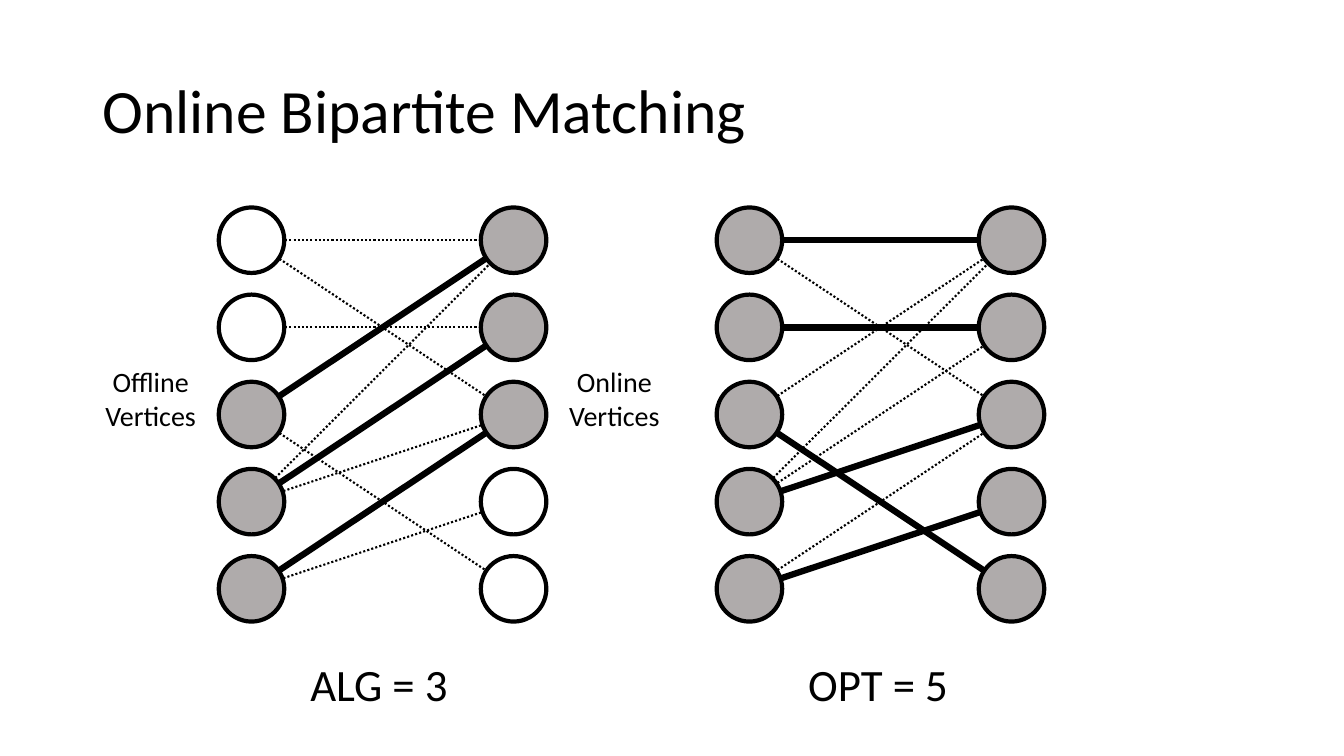
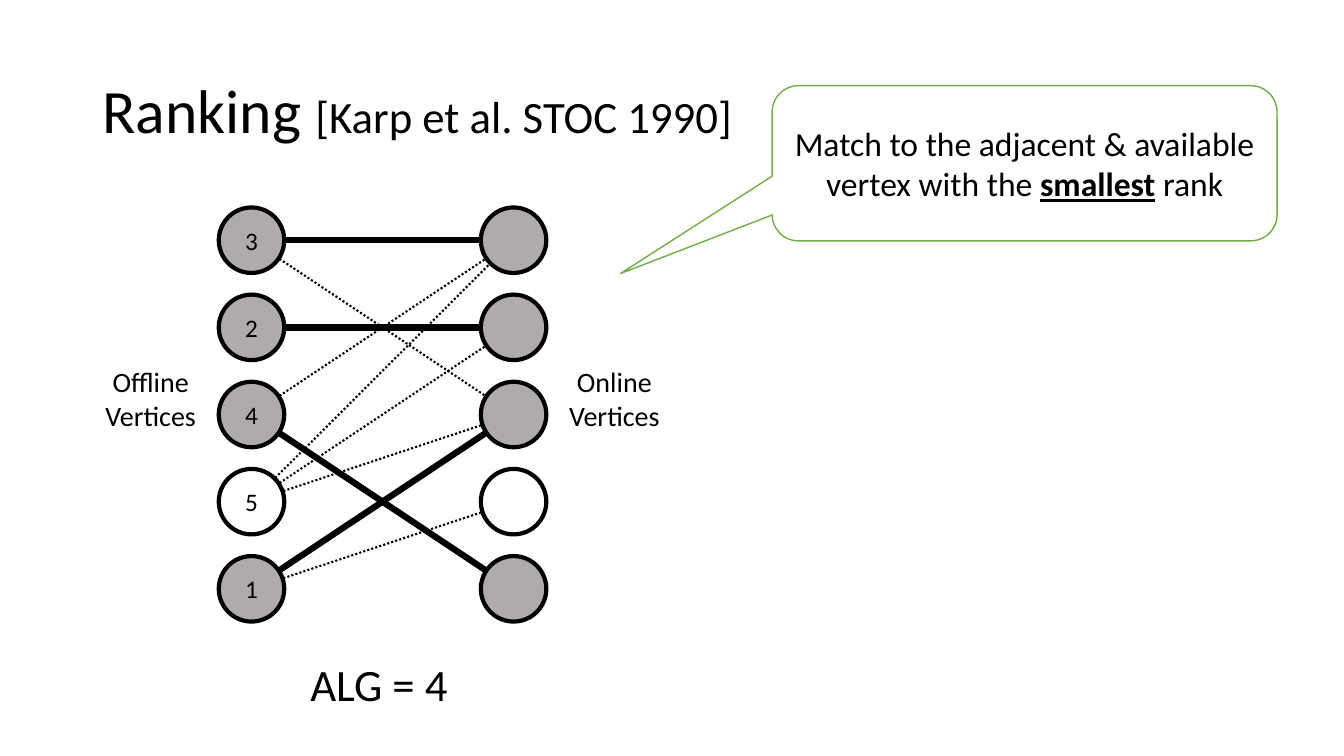
"""Build two slides on online bipartite matching and the Ranking algorithm."""
import pptx
import pptx.dml.color
import pptx.enum.dml
import pptx.enum.shapes
import pptx.enum.text
import pptx.oxml.ns
import pptx.util
import lxml.etree

Pt = pptx.util.Pt
PP_ALIGN = pptx.enum.text.PP_ALIGN
MSO_ANCHOR = pptx.enum.text.MSO_ANCHOR
MSO_SHAPE = pptx.enum.shapes.MSO_SHAPE

FONT = "Calibri"
COLORS = {"ink": "000000", "free": "FFFFFF", "matched": "AFABAB", "callout": "70AD47"}

VERTEX_COUNT = 5
DIAMETER = 46.8
FIRST_TOP = 148.2
ROW_PITCH = 62.25
COLUMN_PITCH = 187.2
LABEL_WIDTH = 97.2
RESULT_WIDTH = 140

EDGES = [(1, 1), (3, 1), (4, 1), (2, 2), (4, 2), (5, 3), (1, 3), (4, 3), (5, 4), (3, 5)]


def format_text(frame, size, align):
    for paragraph in frame.paragraphs:
        paragraph.alignment = align
        for run in paragraph.runs:
            run.font.name = FONT
            run.font.size = Pt(size)
            run.font.color.rgb = pptx.dml.color.RGBColor.from_string(COLORS["ink"])


def add_outlined(slide, preset, box, fill, line, weight):
    outlined = slide.shapes.add_shape(preset, *[Pt(value) for value in box])
    outlined.shadow.inherit = False
    outlined.fill.solid()
    outlined.fill.fore_color.rgb = pptx.dml.color.RGBColor.from_string(COLORS[fill])
    outlined.line.color.rgb = pptx.dml.color.RGBColor.from_string(COLORS[line])
    outlined.line.width = Pt(weight)
    outlined.text_frame.vertical_anchor = MSO_ANCHOR.MIDDLE
    return outlined


deck = pptx.Presentation()
deck.slide_width, deck.slide_height = Pt(960), Pt(540)

slides = []
for heading, citation in [("Online Bipartite Matching", ""), ("Ranking ", "[Karp et al. STOC 1990]")]:
    slide = deck.slides.add_slide(deck.slide_layouts[5])
    title = slide.shapes.title
    title.left, title.top, title.width, title.height = Pt(66), Pt(28.75), Pt(828), Pt(104.4)
    title.text_frame.text = heading
    title.text_frame.vertical_anchor = MSO_ANCHOR.MIDDLE
    title.text_frame.auto_size = pptx.enum.text.MSO_AUTO_SIZE.NONE
    title_line = title.text_frame.paragraphs[0]
    title_line.line_spacing = 0.9
    if citation:
        title_line.add_run().text = citation
    format_text(title.text_frame, 44, PP_ALIGN.LEFT)
    for citation_run in title_line.runs[1:]:
        citation_run.font.size = Pt(32)
    slides.append(slide)

online_slide, ranking_slide = slides

graphs = [
    (online_slide, 156.25, {(3, 1), (4, 2), (5, 3)}, "", "ALG = 3", True),
    (online_slide, 511.9, {(1, 1), (2, 2), (4, 3), (5, 4), (3, 5)}, "", "OPT = 5", False),
    (ranking_slide, 156.25, {(1, 1), (2, 2), (5, 3), (3, 5)}, "32451", "ALG = 4", True),
]

for slide, left, matching, ranks, result, labelled in graphs:
    center_x = left + DIAMETER / 2
    center_y = FIRST_TOP + DIAMETER / 2
    for edge in EDGES:
        start_y, end_y = [Pt(center_y + (vertex - 1) * ROW_PITCH) for vertex in edge]
        edge_line = slide.shapes.add_connector(
            pptx.enum.shapes.MSO_CONNECTOR.STRAIGHT,
            Pt(center_x), start_y, Pt(center_x + COLUMN_PITCH), end_y)
        edge_line.line.color.rgb = pptx.dml.color.RGBColor.from_string(COLORS["ink"])
        edge_line.line.width = Pt(4.5 if edge in matching else 1.5)
        if edge not in matching:
            edge_line.line.dash_style = pptx.enum.dml.MSO_LINE.ROUND_DOT
        lxml.etree.SubElement(edge_line._element.spPr, pptx.oxml.ns.qn("a:effectLst"))

    for side in range(2):
        matched_vertices = {edge[side] for edge in matching}
        for row in range(VERTEX_COUNT):
            box = (left + side * COLUMN_PITCH, FIRST_TOP + row * ROW_PITCH, DIAMETER, DIAMETER)
            fill = "matched" if row + 1 in matched_vertices else "free"
            vertex = add_outlined(slide, MSO_SHAPE.OVAL, box, fill, "ink", 3)
            if ranks and side == 0:
                vertex.text_frame.text = ranks[row]
                format_text(vertex.text_frame, 18, PP_ALIGN.CENTER)

    captions = [(result, left + 58.3, 465.5, RESULT_WIDTH, 46, 32, PP_ALIGN.LEFT)]
    if labelled:
        for label, label_left in [("Offline\nVertices", left - LABEL_WIDTH),
                                  ("Online\nVertices", left + COLUMN_PITCH + DIAMETER)]:
            captions.append((label, label_left, 257, LABEL_WIDTH, 55.7, 20, PP_ALIGN.CENTER))
    for wording, x, y, width, height, size, align in captions:
        caption = slide.shapes.add_textbox(Pt(x), Pt(y), Pt(width), Pt(height))
        caption.text_frame.word_wrap = True
        caption.text_frame.text = wording
        format_text(caption.text_frame, size, align)

rule = add_outlined(ranking_slide, MSO_SHAPE.ROUNDED_RECTANGULAR_CALLOUT,
                    (551.5, 61.2, 360.7, 110.9), "free", "callout", 1)
for index, adjustment in enumerate([-0.8, 0.71, 0.17]):
    rule.adjustments[index] = adjustment
rule_line = rule.text_frame.paragraphs[0]
for wording in ["Match to the adjacent & available vertex with the ", "smallest", " rank"]:
    rule_line.add_run().text = wording
format_text(rule.text_frame, 24, PP_ALIGN.CENTER)
emphasis = rule_line.runs[1].font
emphasis.bold = emphasis.underline = True

deck.save("out.pptx")
